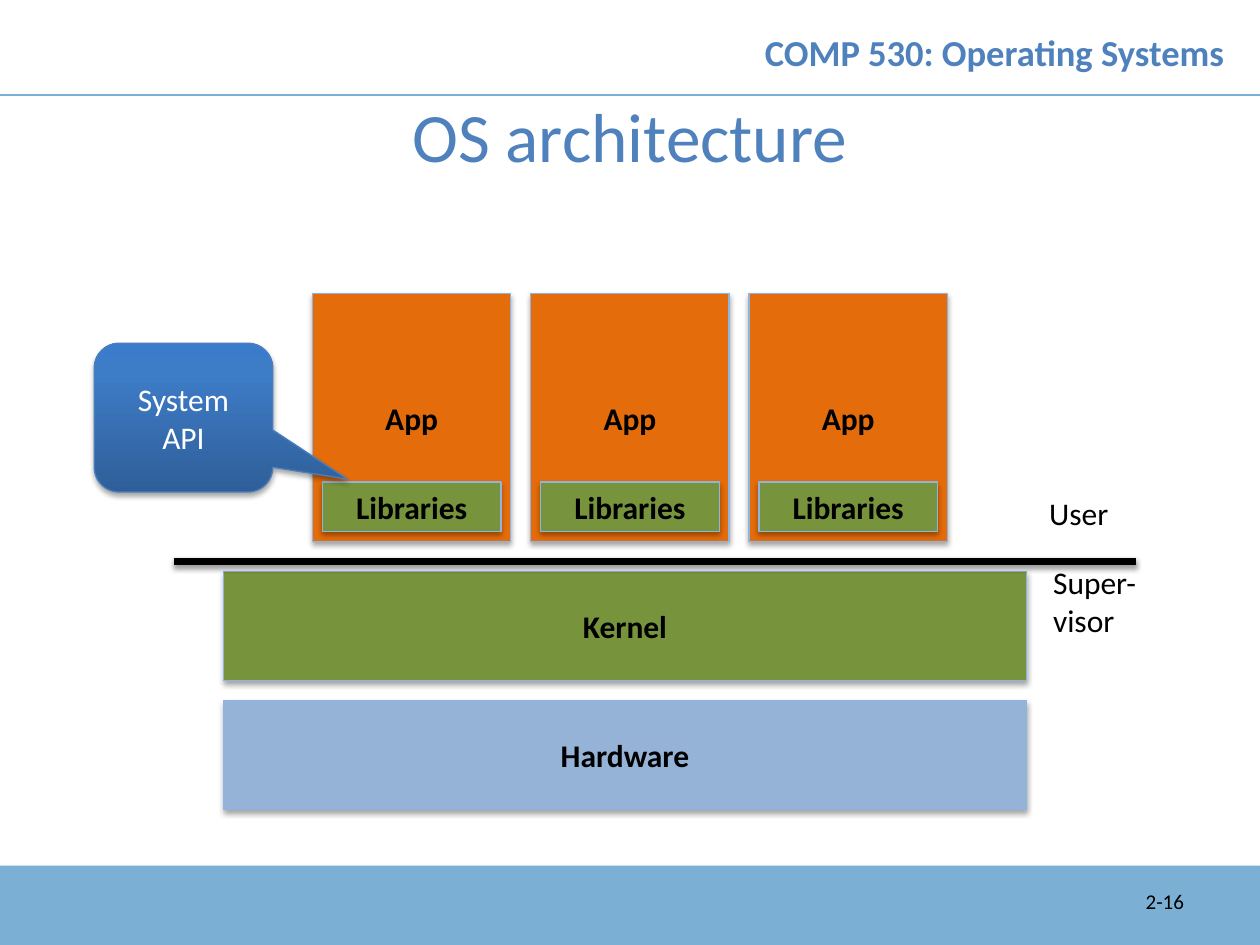
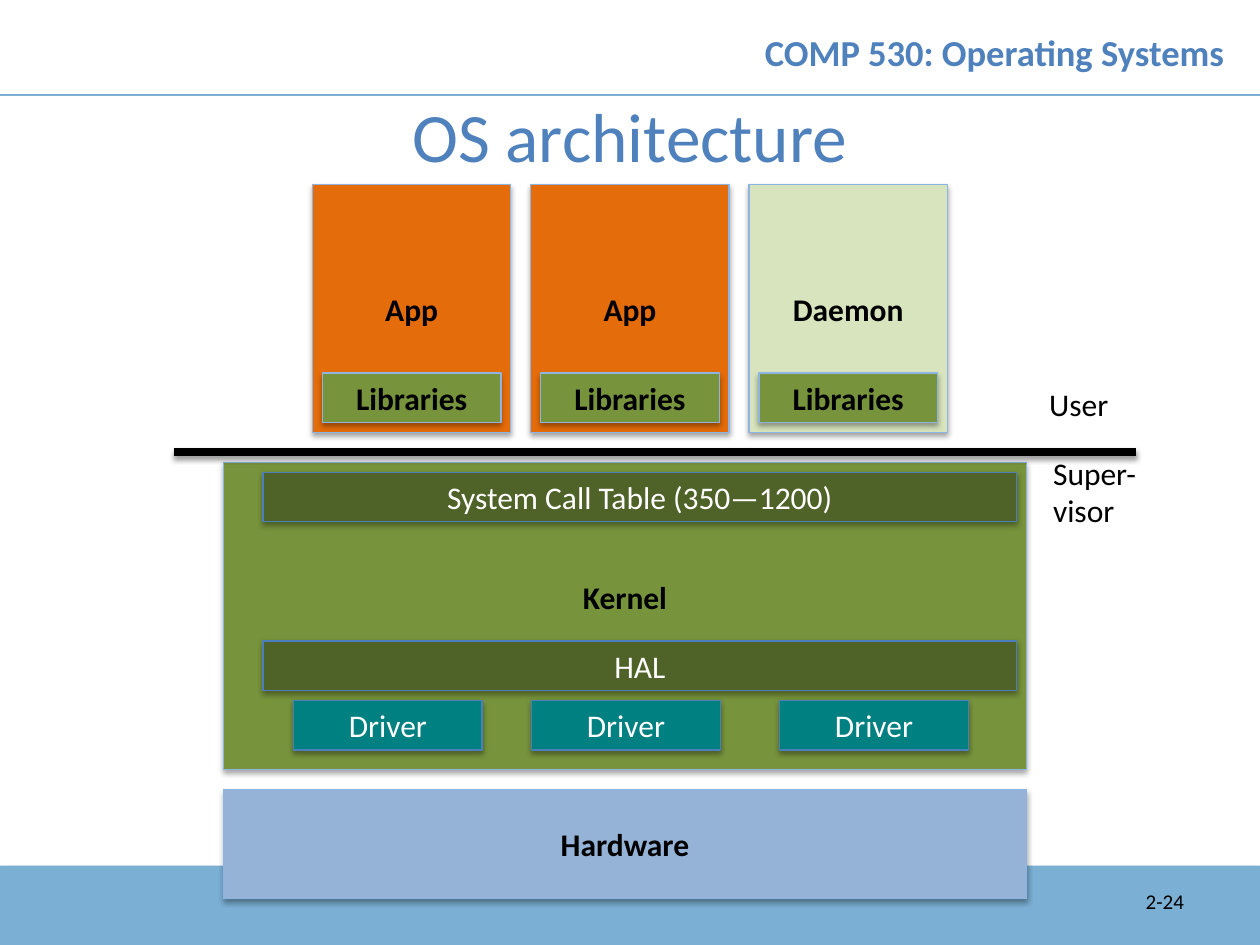
from copy import deepcopy
from dataclasses import dataclass

from lxml import etree
from pptx import Presentation, util as u
from pptx.dml.color import RGBColor
from pptx.enum import shapes, text
from pptx.oxml.ns import qn

# The page is ruled in square cells of 2 mm: 127 columns by 95.25 rows.
CELL = u.Mm(2)
COLUMNS, ROWS = 127, 95.25
HEADER_ROWS, BAND_ROWS = 9.6, 8
APP_COLUMNS = [31.5 + 22 * i for i in range(3)]
DRIVER_COLUMNS = [29.6, 53.6, 78.6]
KERNEL_LEFT, KERNEL_WIDTH = 22.5, 81
BAR_LEFT, BAR_WIDTH = 26.5, 76

SKY, BLUE, BLACK, WHITE = "7BAFD4", "4F81BD", "000000", "FFFFFF"
ORANGE, PALE_GREEN, GREEN = "E46C0A", "D7E4BD", "77933C"
DARK_GREEN, TEAL, STEEL = "4F6228", "008080", "95B3D7"
LIGHT_EDGE, DARK_EDGE = "8EB4E3", "4B7EBC"
CALLOUT_STOPS = [(0, "2F5F99"), (0.8, "3D7CC7"), (1, "3A7CCB")]

LEFT, CENTER, RIGHT = text.PP_ALIGN.LEFT, text.PP_ALIGN.CENTER, text.PP_ALIGN.RIGHT
TOP, MIDDLE = text.MSO_ANCHOR.TOP, text.MSO_ANCHOR.MIDDLE


@dataclass(frozen=True)
class Area:
    """A rectangle in grid cells."""
    left: float
    top: float
    width: float
    height: float

    def lengths(self):
        return [cells(n) for n in (self.left, self.top, self.width, self.height)]


@dataclass(frozen=True)
class Lettering:
    size: float = 18
    color: str = BLACK
    bold: bool = False
    align: text.PP_ALIGN = CENTER
    anchor: text.MSO_ANCHOR = MIDDLE
    spacing: float = 1.0


@dataclass(frozen=True)
class Look:
    fill: str
    edge: str
    lettering: Lettering


@dataclass(frozen=True)
class Architecture:
    """What differs between the pages; app_top is the grid row of the apps."""
    number: str
    app_top: float
    apps: list[tuple[str, str]]
    kernel_rows: float
    detailed: bool


BOLD, LIGHT = Lettering(bold=True), Lettering(color=WHITE)
LABEL = Lettering(align=LEFT, anchor=TOP)
TITLE = Lettering(39.6, BLUE)
HEADER = Lettering(20.9, BLUE, bold=True, spacing=0.8)
NUMBER = Lettering(12, align=RIGHT)
LIBRARY = Look(GREEN, LIGHT_EDGE, BOLD)
HARDWARE = Look(STEEL, LIGHT_EDGE, BOLD)
BAR = Look(DARK_GREEN, DARK_EDGE, LIGHT)
DRIVER = Look(TEAL, DARK_EDGE, LIGHT)

PAGES = [
    Architecture("2-16", 29.6, [("App", ORANGE)] * 3, 11, False),
    Architecture("2-24", 18.6, [("App", ORANGE)] * 2 + [("Daemon", PALE_GREEN)], 31, True),
]


def cells(count: float) -> int:
    return round(count * CELL)


def rgb(color: str) -> RGBColor:
    return RGBColor.from_string(color)


def set_all(target, values: dict) -> None:
    for name, value in values.items():
        setattr(target, name, value)


def write(box, words: str, style: Lettering) -> None:
    frame = box.text_frame
    frame.text = words
    set_all(frame, {"word_wrap": True, "auto_size": text.MSO_AUTO_SIZE.NONE,
                    "vertical_anchor": style.anchor})
    for para in frame.paragraphs:
        set_all(para, {"alignment": style.align, "line_spacing": style.spacing})
        set_all(para.font, {"name": "Calibri", "size": u.Pt(style.size), "bold": style.bold})
        para.font.color.rgb = rgb(style.color)


def add_label(page, words: str, area: Area, style: Lettering) -> None:
    write(page.shapes.add_textbox(*area.lengths()), words, style)


def cast_shadow(effects, opacity: int, distance: float) -> None:
    shadow = etree.SubElement(effects, qn("a:outerShdw"), blurRad=str(u.Pt(3.1)),
                              dist=str(u.Pt(distance)), dir="5400000", rotWithShape="0")
    color = etree.SubElement(shadow, qn("a:srgbClr"), val=BLACK)
    etree.SubElement(color, qn("a:alpha"), val=str(opacity * 1000))


def add_block(page, words: str, area: Area, look: Look,
              kind=shapes.MSO_SHAPE.RECTANGLE):
    box = page.shapes.add_shape(kind, *area.lengths())
    box.fill.solid()
    box.fill.fore_color.rgb = rgb(look.fill)
    box.line.color.rgb = rgb(look.edge)
    box.line.width = u.Pt(0.75)
    box.shadow.inherit = False
    cast_shadow(box.element.spPr.find(qn("a:effectLst")), 35, 1.8)
    if words:
        write(box, words, look.lettering)
    return box


def add_rule(page, left: float, right: float, row: float, color: str, width: float):
    """Draw a level line and return its empty effect list."""
    rule = page.shapes.add_connector(shapes.MSO_CONNECTOR.STRAIGHT, cells(left), cells(row),
                                     cells(right), cells(row))
    rule.line.color.rgb = rgb(color)
    rule.line.width = u.Pt(width)
    return etree.SubElement(rule.element.spPr, qn("a:effectLst"))


def add_page(deck, number: str):
    """Add a page with the header, title, footer band and page number."""
    page = deck.slides.add_slide(deck.slide_layouts[5])
    title = page.shapes.title
    area = Area(0, HEADER_ROWS, COLUMNS, 8)
    set_all(title, dict(zip(("left", "top", "width", "height"), area.lengths())))
    write(title, "OS architecture", TITLE)
    band = add_block(page, "", Area(0, ROWS - BAND_ROWS, COLUMNS, BAND_ROWS),
                     Look(SKY, SKY, BOLD))
    band.line.fill.background()
    add_rule(page, 0, COLUMNS, HEADER_ROWS, SKY, 1)
    add_label(page, "COMP 530: Operating Systems", Area(73.5, 1.6, 53.5, 8), HEADER)
    add_label(page, number, Area(91, 88.3, 29.6, 5), NUMBER)
    return page


def add_apps(page, plan: Architecture) -> None:
    for left, (name, fill) in zip(APP_COLUMNS, plan.apps):
        add_block(page, name, Area(left, plan.app_top, 20, 25), Look(fill, LIGHT_EDGE, BOLD))
        add_block(page, "Libraries", Area(left + 1, plan.app_top + 19, 18, 5), LIBRARY)


def add_boundary(page, app_top: float) -> None:
    """Separate user space from supervisor space."""
    cast_shadow(add_rule(page, 17.5, 114.5, app_top + 27, BLACK, 4.5), 38, 1.6)
    add_label(page, "User", Area(104.5, app_top + 19.6, 11.7, 6.4), LABEL)
    add_label(page, "Super-\vvisor", Area(104.9, app_top + 26.5, 15.6, 11.5), LABEL)


def add_kernel(page, plan: Architecture) -> None:
    top = plan.app_top + 28
    kernel = add_block(page, "Kernel", Area(KERNEL_LEFT, top, KERNEL_WIDTH, plan.kernel_rows),
                       LIBRARY)
    add_block(page, "Hardware",
              Area(KERNEL_LEFT, top + plan.kernel_rows + 2, KERNEL_WIDTH, 11), HARDWARE)
    if plan.detailed:
        kernel.text_frame.margin_bottom = cells(4.5)
        for words, offset in (("System Call Table (350—1200)", 1), ("HAL", 18)):
            add_block(page, words, Area(BAR_LEFT, top + offset, BAR_WIDTH, 5), BAR)
        for left in DRIVER_COLUMNS:
            add_block(page, "Driver", Area(left, top + 24, 19, 5), DRIVER)


def add_callout(page, app_top: float) -> None:
    callout = add_block(page, "System\nAPI", Area(9.5, app_top + 5, 18, 15),
                        Look(BLUE, DARK_EDGE, LIGHT),
                        shapes.MSO_SHAPE.ROUNDED_RECTANGULAR_CALLOUT)
    for i, value in enumerate((0.918, 0.413, 0.167)):
        callout.adjustments[i] = value
    callout.fill.gradient()
    callout.fill.gradient_angle = 90
    stop_list = callout.element.spPr.find(".//" + qn("a:gsLst"))
    stop_list.append(deepcopy(stop_list[-1]))
    for stop, (position, color) in zip(callout.fill.gradient_stops, CALLOUT_STOPS):
        stop.position = position
        stop.color.rgb = rgb(color)


def main() -> None:
    deck = Presentation()
    deck.slide_width, deck.slide_height = u.Inches(10), u.Inches(7.5)
    for plan in PAGES:
        page = add_page(deck, plan.number)
        add_apps(page, plan)
        add_kernel(page, plan)
        add_boundary(page, plan.app_top)
        if not plan.detailed:
            add_callout(page, plan.app_top)
    deck.save("out.pptx")


if __name__ == "__main__":
    main()
